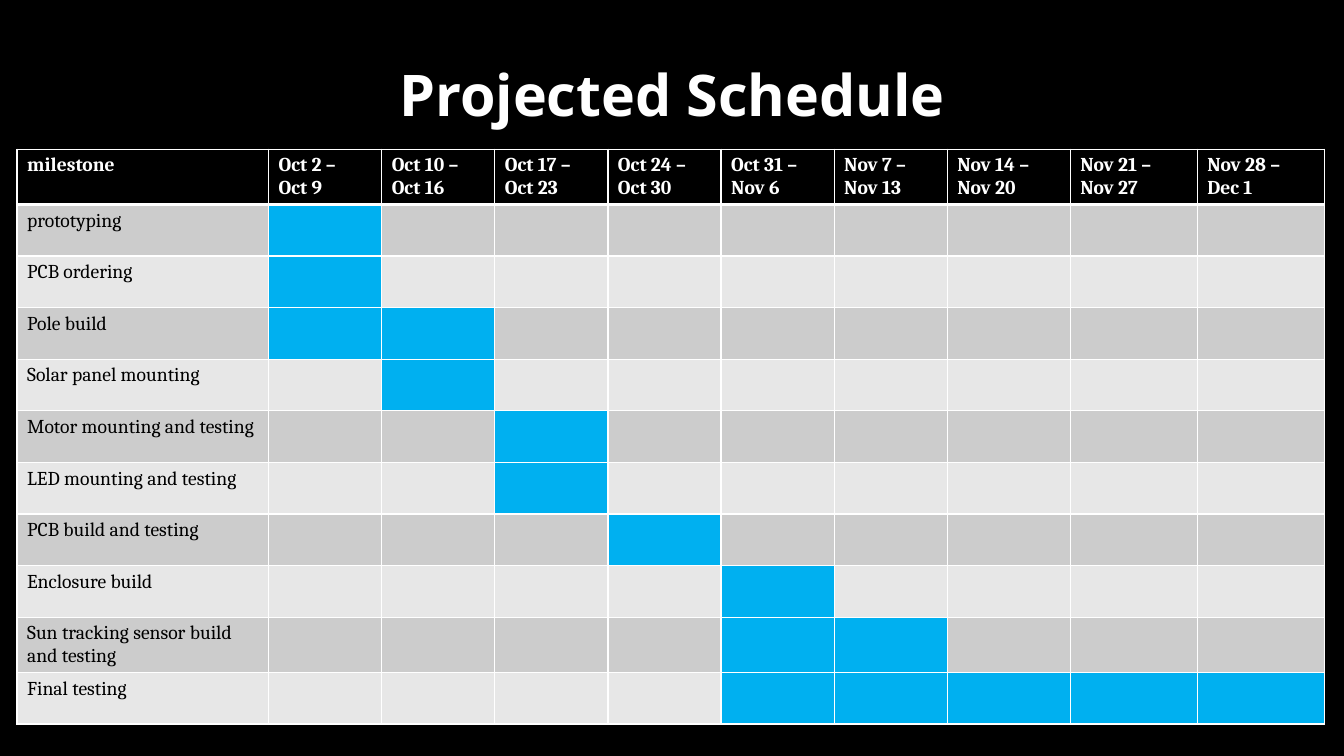
import pptx
import pptx.dml.color
import pptx.enum.text
import pptx.oxml
import pptx.oxml.ns
import pptx.util

Cm = pptx.util.Cm


def color(hex_value):
    return pptx.dml.color.RGBColor.from_string(hex_value)


def fill_cell(cell, fill, bottom_width):
    """Fill a cell and give it white borders; widths are in points."""
    borders = {"lnL": 1, "lnR": 1, "lnT": 1, "lnB": bottom_width}
    for side, width in borders.items():
        cell._tc.get_or_add_tcPr().append(pptx.oxml.parse_xml(
            f'<a:{side} {pptx.oxml.ns.nsdecls("a")} w="{pptx.util.Pt(width)}">'
            f'<a:solidFill><a:srgbClr val="FFFFFF"/></a:solidFill></a:{side}>'))
    cell.fill.solid()
    cell.fill.fore_color.rgb = color(fill)


weeks = ["Oct 2 –\nOct 9", "Oct 10 –\nOct 16", "Oct 17 –\nOct 23",
         "Oct 24 –\nOct 30", "Oct 31 –\nNov 6", "Nov 7 –\nNov 13",
         "Nov 14 –\nNov 20", "Nov 21 –\nNov 27", "Nov 28 –\nDec 1"]

# Milestone, first week, last week
milestones = [
    ("prototyping", 1, 1),
    ("PCB ordering", 1, 1),
    ("Pole build", 1, 2),
    ("Solar panel mounting", 2, 2),
    ("Motor mounting and testing", 3, 3),
    ("LED mounting and testing", 3, 3),
    ("PCB build and testing", 4, 4),
    ("Enclosure build", 5, 5),
    ("Sun tracking sensor build and testing", 5, 6),
    ("Final testing", 5, 9),
]
column_widths = [6.34] + [2.85] * 6 + [3.1, 3.2, 3.2]
row_height = 1.3

title_format = {"name": "Noto Sans", "size": pptx.util.Pt(41), "bold": True}
header_format = {"name": "Cambria", "size": pptx.util.Pt(14), "bold": True}
milestone_format = {**header_format, "bold": False}

presentation = pptx.Presentation()
presentation.slide_width = Cm(33.87)
presentation.slide_height = Cm(19.05)
slide = presentation.slides.add_slide(presentation.slide_layouts[5])
slide.background.fill.solid()
slide.background.fill.fore_color.rgb = color("000000")

heading = slide.shapes.title
heading.left, heading.top = Cm(1.7), Cm(0.76)
heading.width, heading.height = Cm(30.48), Cm(3.18)
heading.text_frame.text = "Projected Schedule"
heading.text_frame.vertical_anchor = pptx.enum.text.MSO_ANCHOR.MIDDLE
heading_line = heading.text_frame.paragraphs[0]
heading_line.alignment = pptx.enum.text.PP_ALIGN.CENTER
heading_font = heading_line.runs[0].font
for attribute, value in title_format.items():
    setattr(heading_font, attribute, value)
heading_font.color.rgb = color("FFFFFF")

row_count = len(milestones) + 1
schedule = slide.shapes.add_table(
    row_count, len(column_widths), Cm(0.43), Cm(3.76),
    Cm(sum(column_widths)), Cm(row_height * row_count)).table
for column, width in zip(schedule.columns, column_widths):
    column.width = Cm(width)
for row in schedule.rows:
    row.height = Cm(row_height)

for index, label in enumerate(["milestone"] + weeks):
    header = schedule.cell(0, index)
    header.text = label
    fill_cell(header, "000000", 3)
    for paragraph in header.text_frame.paragraphs:
        header_font = paragraph.runs[0].font
        for attribute, value in header_format.items():
            setattr(header_font, attribute, value)
        header_font.color.rgb = color("FFFFFF")

for row_index, (milestone, first_week, last_week) in enumerate(milestones, 1):
    band = "CCCCCC" if row_index % 2 else "E7E7E7"
    for week in range(len(column_widths)):
        active = first_week <= week <= last_week
        fill_cell(schedule.cell(row_index, week), "00B0F0" if active else band, 1)
    name_cell = schedule.cell(row_index, 0)
    name_cell.text = milestone
    name_font = name_cell.text_frame.paragraphs[0].runs[0].font
    for attribute, value in milestone_format.items():
        setattr(name_font, attribute, value)
    name_font.color.rgb = color("000000")

presentation.save("out.pptx")
